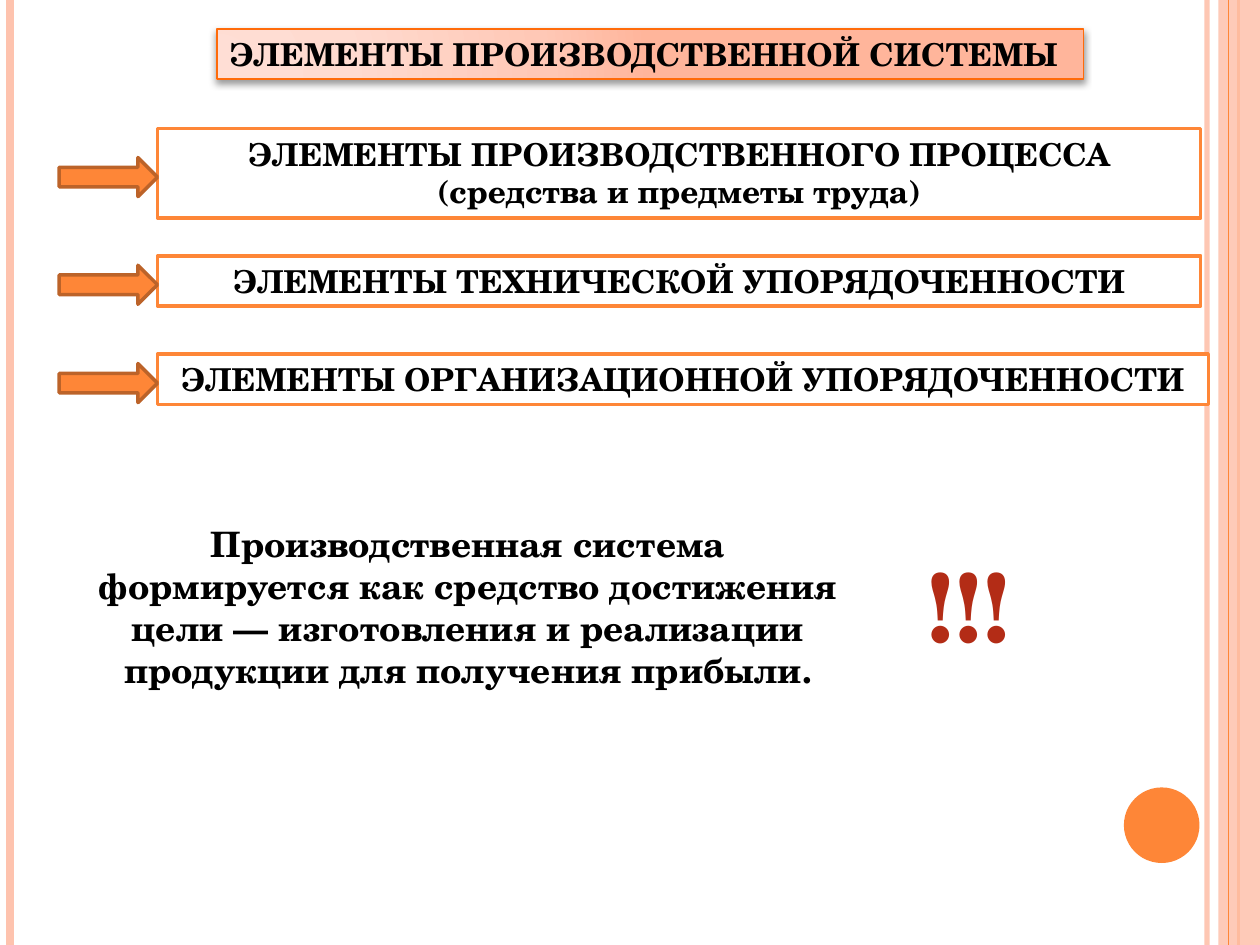
from collections import namedtuple

from lxml import etree
from pptx import Presentation
from pptx.dml.color import RGBColor
from pptx.enum.shapes import MSO_CONNECTOR, MSO_SHAPE
from pptx.enum.text import MSO_ANCHOR, PP_ALIGN
from pptx.oxml import parse_xml
from pptx.oxml.ns import nsdecls, qn
from pptx.util import Inches, Pt

RECTANGLE, OVAL, ARROW = MSO_SHAPE.RECTANGLE, MSO_SHAPE.OVAL, MSO_SHAPE.RIGHT_ARROW
STRAIGHT = MSO_CONNECTOR.STRAIGHT
LEFT, CENTER = PP_ALIGN.LEFT, PP_ALIGN.CENTER
TOP = MSO_ANCHOR.TOP

WHITE = RGBColor(0xFF, 0xFF, 0xFF)
BLACK = RGBColor(0x00, 0x00, 0x00)
ORANGE = RGBColor(0xFE, 0x86, 0x37)
DARK_ORANGE = RGBColor(0xBC, 0x63, 0x29)
BRIGHT_ORANGE = RGBColor(0xFF, 0x6B, 0x0A)
PEACH = RGBColor(0xFE, 0xC3, 0xAE)
RED = RGBColor(0xB3, 0x2C, 0x16)
TITLE_STOPS = [
    (0, RGBColor(0xFF, 0xDE, 0xD5)),
    (30, RGBColor(0xFF, 0xDB, 0xD0)),
    (75, RGBColor(0xFF, 0xC8, 0xB6)),
    (100, RGBColor(0xFF, 0xB5, 0x9B)),
]
FONT = "TeX Gyre Schola"
WIDTH, HEIGHT = Inches(10), Inches(7.5)

# Left, top, width and height in percent of the slide
Box = namedtuple("Box", "left top width height")


def across(share):
    return round(WIDTH * share / 100)


def down(share):
    return round(HEIGHT * share / 100)


def place(box):
    return across(box.left), down(box.top), across(box.width), down(box.height)


def add_panel(slide, kind, box, fill, outline=None, weight=2):
    panel = slide.shapes.add_shape(kind, *place(box))
    panel.shadow.inherit = False
    panel.fill.solid()
    panel.fill.fore_color.rgb = fill
    if outline is None:
        panel.line.fill.background()
    else:
        panel.line.color.rgb = outline
        panel.line.width = Pt(weight)
    return panel


def write(shape, lines, size, color=BLACK, align=CENTER):
    frame = shape.text_frame
    frame.word_wrap = True
    frame.vertical_anchor = TOP
    frame.text = "\n".join(lines)
    for paragraph in frame.paragraphs:
        paragraph.alignment = align
        paragraph.font.name = FONT
        paragraph.font.size = Pt(size)
        paragraph.font.bold = True
        paragraph.font.color.rgb = color


def set_opacity(color_fill, percent):
    color = color_fill._xPr.find(".//" + qn("a:srgbClr"))
    etree.SubElement(color, qn("a:alpha"), val=str(percent * 1000))


def add_stripe(slide, left, color, weight):
    """Draw a vertical line over the full height of the slide."""
    stripe = slide.shapes.add_connector(STRAIGHT, across(left), 0, across(left), HEIGHT)
    stripe.line.color.rgb = color
    stripe.line.width = Pt(weight)
    etree.SubElement(stripe._element.spPr, qn("a:effectLst"))
    return stripe


def add_frame(slide):
    """Draw the stripes along both edges and the page disc."""
    inner_stripe = add_stripe(slide, 95.8, PEACH, 3)
    set_opacity(inner_stripe.line.fill, 93)
    add_stripe(slide, 0.8, PEACH, 4.5)
    add_stripe(slide, 98.3, ORANGE, 1.5)
    band = add_panel(slide, RECTANGLE, Box(96.7, 0, 3.3, 100), PEACH)
    set_opacity(band.fill, 87)
    add_stripe(slide, 97.5, ORANGE, 0.75)
    add_panel(slide, OVAL, Box(89.2, 83.33, 6, 8), ORANGE)


def add_title(slide, box, text):
    title = add_panel(slide, RECTANGLE, box, PEACH, BRIGHT_ORANGE, 1)
    write(title, [text], 18, align=LEFT)
    stops = "".join(
        f'<a:gs pos="{position * 1000}"><a:srgbClr val="{color}"/></a:gs>'
        for position, color in TITLE_STOPS
    )
    gradient = parse_xml(
        f'<a:gradFill {nsdecls("a")} rotWithShape="1"><a:gsLst>{stops}</a:gsLst>'
        '<a:path path="circle"><a:fillToRect l="5000" t="100000" r="120000" b="10000"/>'
        "</a:path></a:gradFill>"
    )
    properties = title._element.spPr
    properties.replace(properties.find(qn("a:solidFill")), gradient)
    shadow = parse_xml(
        f'<a:outerShdw {nsdecls("a")} blurRad="{Pt(4)}" dist="{Pt(2)}" dir="5400000" '
        'rotWithShape="0"><a:srgbClr val="000000"><a:alpha val="40000"/></a:srgbClr>'
        "</a:outerShdw>"
    )
    properties.find(qn("a:effectLst")).append(shadow)


def add_element(slide, box, lines):
    """Draw a framed element with the arrow that leads to its left side."""
    write(add_panel(slide, RECTANGLE, box, WHITE, ORANGE), lines, 18)
    arrow_width, arrow_height, drop = 7.8, 4.13, 0.4
    arrow_top = box.top + (box.height - arrow_height) / 2 + drop
    arrow_box = Box(box.left - arrow_width, arrow_top, arrow_width, arrow_height)
    add_panel(slide, ARROW, arrow_box, ORANGE, DARK_ORANGE)


def add_text(slide, box, text, size, color=BLACK):
    write(slide.shapes.add_textbox(*place(box)), [text], size, color)


def main():
    deck = Presentation()
    deck.slide_width, deck.slide_height = WIDTH, HEIGHT
    slide = deck.slides.add_slide(deck.slide_layouts[6])

    add_frame(slide)
    add_title(slide, Box(17.2, 3.07, 68.8, 5.33), "ЭЛЕМЕНТЫ ПРОИЗВОДСТВЕННОЙ СИСТЕМЫ")
    elements = [
        (13.6, 82.8, 9.47, ["ЭЛЕМЕНТЫ ПРОИЗВОДСТВЕННОГО ПРОЦЕССА", "(средства и предметы труда)"]),
        (27.07, 82.8, 5.33, ["ЭЛЕМЕНТЫ ТЕХНИЧЕСКОЙ УПОРЯДОЧЕННОСТИ"]),
        (37.47, 83.4, 5.33, ["ЭЛЕМЕНТЫ ОРГАНИЗАЦИОННОЙ УПОРЯДОЧЕННОСТИ"]),
    ]
    for top, width, height, lines in elements:
        add_element(slide, Box(12.5, top, width, height), lines)

    conclusion = (
        "Производственная система формируется как средство достижения цели — "
        "изготовления и реализации продукции для получения прибыли."
    )
    add_text(slide, Box(5.5, 54.67, 63.3, 19.33), conclusion, 20)
    add_text(slide, Box(69.5, 57.33, 14.8, 13.47), "!!!", 54, RED)

    deck.save("out.pptx")


if __name__ == "__main__":
    main()
